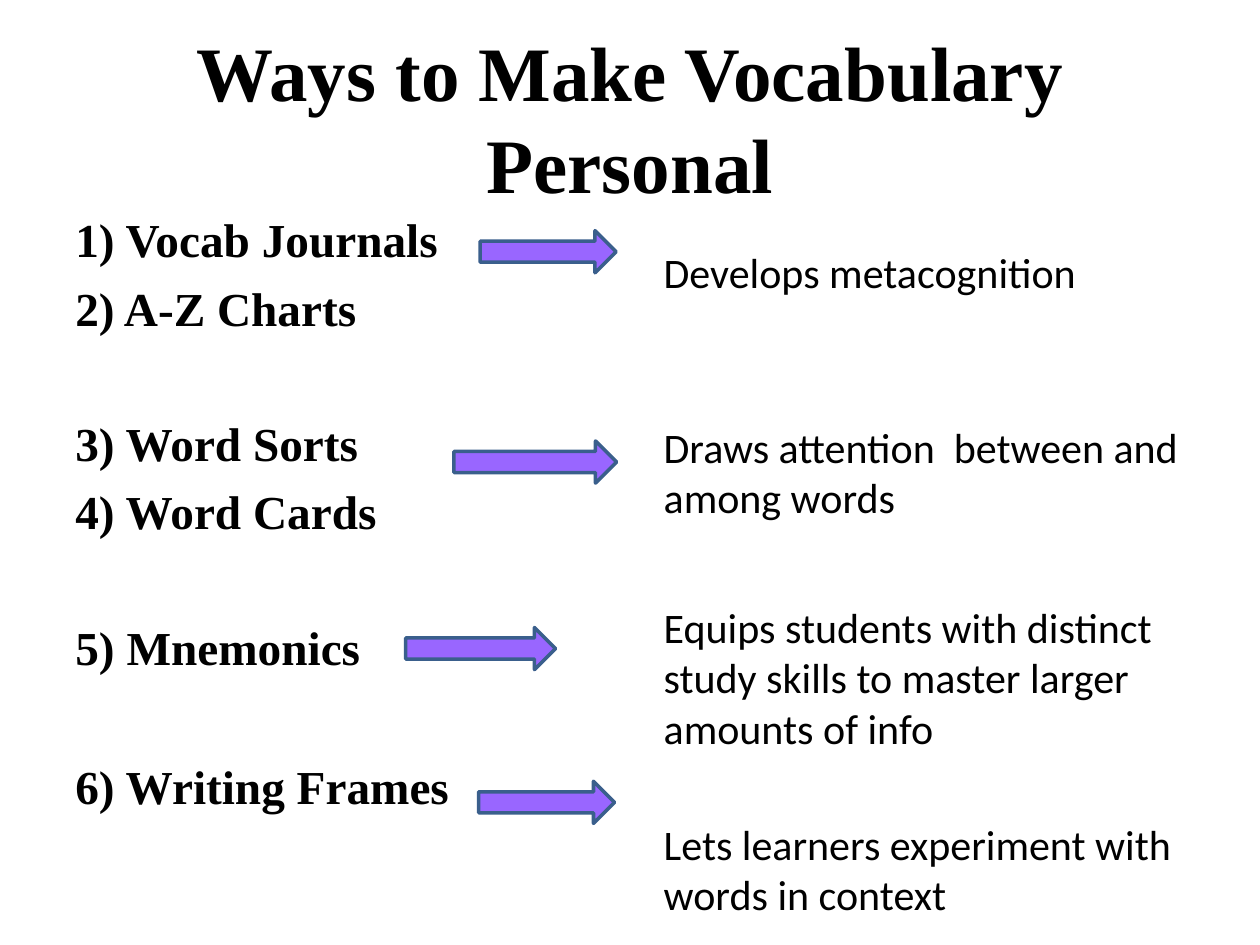
from dataclasses import dataclass

from pptx import Presentation
from pptx.dml.color import RGBColor
from pptx.enum.shapes import MSO_SHAPE
from pptx.enum.text import MSO_ANCHOR, MSO_AUTO_SIZE, PP_ALIGN
from pptx.util import Cm, Pt

RIGHT_ARROW = MSO_SHAPE.RIGHT_ARROW
MIDDLE = MSO_ANCHOR.MIDDLE
NO_FIT = MSO_AUTO_SIZE.NONE
LEFT, CENTER = PP_ALIGN.LEFT, PP_ALIGN.CENTER
TITLE_ONLY = 5


@dataclass(frozen=True)
class Theme:
    """Colours, fonts and type sizes of the slide."""
    ink: RGBColor = RGBColor(0x00, 0x00, 0x00)
    arrow: RGBColor = RGBColor(0x99, 0x66, 0xFF)
    outline: RGBColor = RGBColor(0x3A, 0x5F, 0x8C)
    serif: str = "Times New Roman"
    sans: str = "Calibri"
    title_size: int = 44
    way_size: int = 27
    benefit_size: int = 24


THEME = Theme()

WAYS = [
    ("1) Vocab Journals", 0),
    ("2) A-Z Charts", 6.7),
    ("3) Word Sorts", 45),
    ("4) Word Cards", 6.7),
    ("5) Mnemonics", 45),
    ("6) Writing Frames", 47.2),
]
BENEFITS = [
    ("Develops metacognition", 0),
    ("Draws attention  between and among words", 71.4),
    ("Equips students with distinct study skills to master larger amounts of info", 45.2),
    ("Lets learners experiment with words in context", 37.7),
]
ARROWS = [(1.5, 0, 2.74), (0.97, 4.24, 3.28), (0, 8, 3.02), (1.47, 11.1, 2.74)]


def style_paragraph(p, font, size, bold, align):
    """Align a paragraph and format its runs."""
    p.alignment = align
    for r in p.runs:
        r.font.name = font
        r.font.size = Pt(size)
        r.font.bold = bold
        r.font.color.rgb = THEME.ink


def place_title(s, box, text):
    """Move, fill and format the title placeholder."""
    title = s.shapes.title
    title.left, title.top, title.width, title.height = box
    tf = title.text_frame
    tf.text = text
    tf.word_wrap = True
    tf.auto_size = NO_FIT
    tf.vertical_anchor = MIDDLE
    style_paragraph(tf.paragraphs[0], THEME.serif, THEME.title_size, True, CENTER)


def add_column(s, box, inset, entries, font, size, bold):
    """Add a text column with its own space above each entry."""
    tf = s.shapes.add_textbox(*box).text_frame
    tf.word_wrap = True
    tf.margin_top = inset
    for i, (text, gap) in enumerate(entries):
        p = tf.add_paragraph() if i else tf.paragraphs[0]
        p.text = text
        p.space_before = Pt(gap)
        style_paragraph(p, font, size, bold, LEFT)


def add_arrows(s, box, arrows):
    """Add the arrows, each offset from the corner of the box."""
    left, top, _, _ = box
    for dx, dy, width in arrows:
        sp = s.shapes.add_shape(RIGHT_ARROW, left + Cm(dx), top + Cm(dy), Cm(width), Cm(0.85))
        sp.shadow.inherit = False
        sp.fill.solid()
        sp.fill.fore_color.rgb = THEME.arrow
        sp.line.color.rgb = THEME.outline
        sp.line.width = Pt(2)


def main():
    """Build and save the slide."""
    prs = Presentation()
    prs.slide_width, prs.slide_height = Cm(25.4), Cm(19.05)
    s = prs.slides.add_slide(prs.slide_layouts[TITLE_ONLY])
    place_title(s, (Cm(1.27), Cm(0.76), Cm(22.86), Cm(3.18)), "Ways to Make Vocabulary Personal")
    add_column(s, (Cm(1.27), Cm(4.01), Cm(11.23), Cm(13)), Cm(0.23),
               WAYS, THEME.serif, THEME.way_size, True)
    add_column(s, (Cm(13.13), Cm(3.61), Cm(11.73), Cm(14.81)), Cm(1.35),
               BENEFITS, THEME.sans, THEME.benefit_size, False)
    add_arrows(s, (Cm(8.18), Cm(4.65), Cm(4.24), Cm(11.95)), ARROWS)
    prs.save("out.pptx")


if __name__ == "__main__":
    main()
